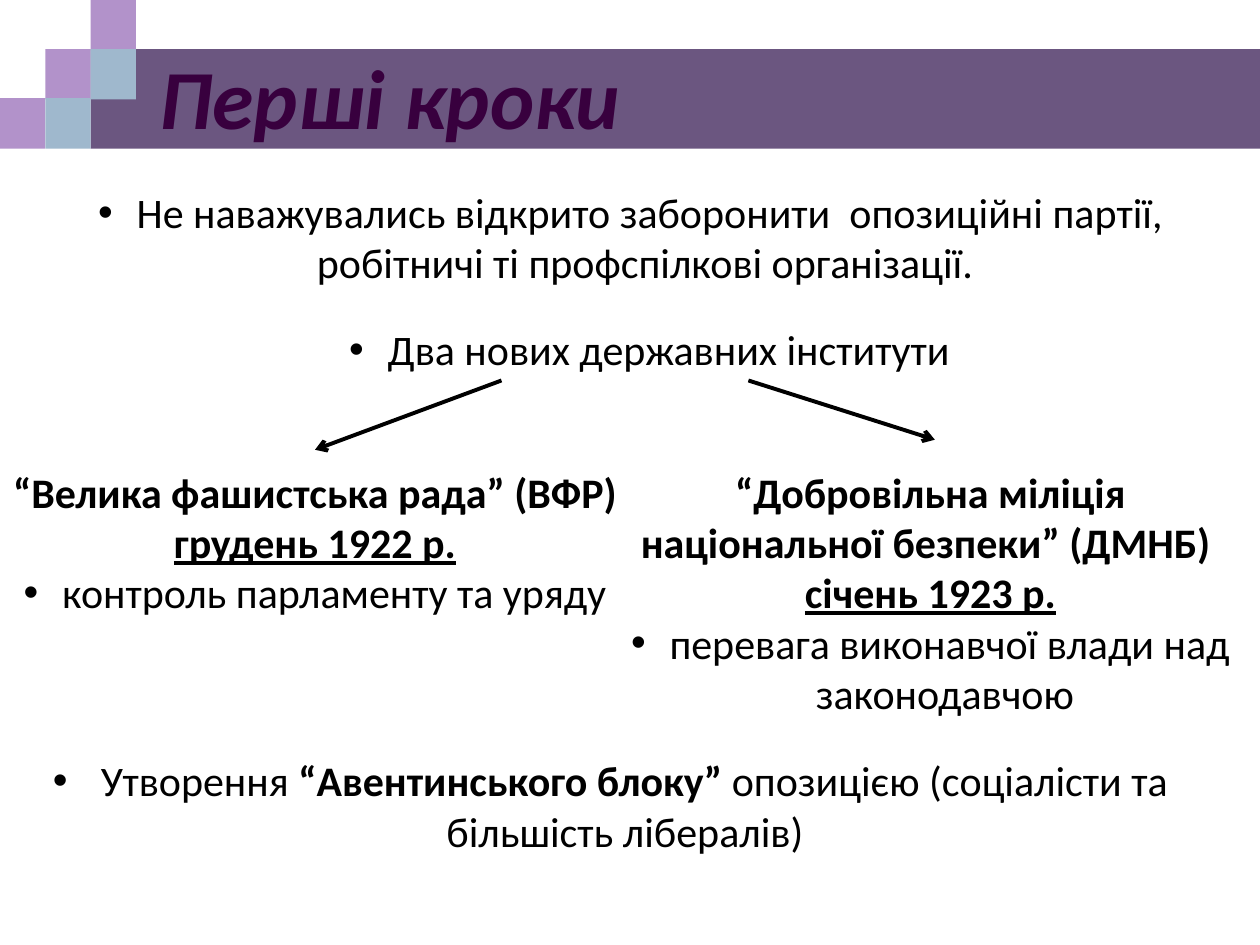
from lxml import etree
from pptx import Presentation
from pptx.dml.color import RGBColor
from pptx.enum.shapes import MSO_CONNECTOR, MSO_SHAPE
from pptx.enum.text import PP_ALIGN
from pptx.oxml.ns import qn
from pptx.util import Inches, Pt

RECT = MSO_SHAPE.RECTANGLE
LINE = MSO_CONNECTOR.STRAIGHT
CENTER = PP_ALIGN.CENTER
FONT = "Calibri"
HANG = Inches(0.23)
COLORS = {
    "band": "6B5680",
    "lilac": "B292CA",
    "blue": "9FB8CD",
    "title": "38003E",
    "edge": "FCFCFD",
    "ink": "000000",
}


def rgb(name):
    return RGBColor.from_string(COLORS[name])


def add_rect(slide, left, top, width, height, color):
    rect = slide.shapes.add_shape(
        RECT, Inches(left), Inches(top), Inches(width), Inches(height))
    rect.shadow.inherit = False
    rect.fill.solid()
    rect.fill.fore_color.rgb = rgb(color)
    rect.line.fill.background()


def add_box(slide, left, top, width, height):
    box = slide.shapes.add_textbox(
        Inches(left), Inches(top), Inches(width), Inches(height))
    box.text_frame.word_wrap = True
    return box.text_frame


def add_run(para, text, size=24, color="ink", bold=False, italic=False, under=False):
    run = para.add_run()
    run.text = text
    font = run.font
    font.name, font.size = FONT, Pt(size)
    font.bold, font.italic, font.underline = bold, italic, under
    font.color.rgb = rgb(color)
    return run


def add_bullet(para):
    props = para._p.get_or_add_pPr()
    props.set("marL", str(HANG))
    props.set("indent", str(-HANG))
    etree.SubElement(props, qn("a:buFont"), typeface="Arial")
    etree.SubElement(props, qn("a:buChar"), char="•")


def add_text(slide, place, paras):
    """Fill a centred box; each paragraph is (bulleted, [(text, style), ...])."""
    frame = add_box(slide, *place)
    for i, (bullet, runs) in enumerate(paras):
        para = frame.add_paragraph() if i else frame.paragraphs[0]
        para.alignment = CENTER
        if bullet:
            add_bullet(para)
        for text, style in runs:
            add_run(para, text, **style)


def add_arrow(slide, x1, y1, x2, y2):
    arrow = slide.shapes.add_connector(
        LINE, Inches(x1), Inches(y1), Inches(x2), Inches(y2))
    arrow.line.color.rgb = rgb("ink")
    arrow.line.width = Pt(2.25)
    etree.SubElement(arrow.line._get_or_add_ln(), qn("a:tailEnd"), type="arrow")
    etree.SubElement(arrow._element.spPr, qn("a:effectLst"))


def add_title(slide, text):
    para = add_box(slide, 1.17, 0.31, 8.83, 0.91).paragraphs[0]
    run = add_run(para, text, 48, "title", bold=True, italic=True)
    edge = etree.Element(qn("a:ln"), w=str(Pt(1.4)))
    fill = etree.SubElement(edge, qn("a:solidFill"))
    etree.SubElement(fill, qn("a:srgbClr"), val=COLORS["edge"])
    run.font._element.insert(0, edge)


def add_header(slide):
    """Draw the band and the stair of squares at its left end."""
    wide, high = 0.36, 0.4
    add_rect(slide, 2 * wide, 0.39, 9.28, 0.79, "band")
    for col, row, color in [(0, 2, "lilac"), (1, 1, "lilac"), (2, 0, "lilac"),
                            (2, 1, "blue"), (1, 2, "blue")]:
        add_rect(slide, col * wide, row * 0.39, wide, high, color)


def add_branch(slide, place, name, date, role):
    add_text(slide, place, [
        (False, [(name, {"bold": True})]),
        (False, [(date, {"bold": True, "under": True})]),
        (True, [(role, {})]),
    ])


def main():
    deck = Presentation()
    deck.slide_width, deck.slide_height = Inches(10), Inches(7.5)
    slide = deck.slides.add_slide(deck.slide_layouts[6])

    add_header(slide)
    add_title(slide, "Перші кроки")
    add_text(slide, (0.16, 1.43, 9.69, 0.91), [(True, [
        (" Не наважувались відкрито заборонити  опозиційні партії, "
         "робітничі ті профспілкові організації.", {})])])
    add_text(slide, (0.31, 2.52, 9.69, 0.5), [(True, [
        (" Два нових державних інститути", {})])])
    add_arrow(slide, 3.98, 3.02, 2.5, 3.57)
    add_arrow(slide, 5.94, 3.02, 7.42, 3.49)
    add_branch(slide, (0, 3.65, 5, 2.12), "“Велика фашистська рада” (ВФР) ",
               "грудень 1922 р.", " контроль парламенту та уряду")
    add_branch(slide, (4.77, 3.65, 5.23, 2.52),
               "“Добровільна міліція національної безпеки” (ДМНБ) ",
               "січень 1923 р.", " перевага виконавчої влади над законодавчою")
    add_text(slide, (0, 5.94, 9.69, 0.91), [(True, [
        ("  Утворення ", {}),
        ("“Авентинського блоку” ", {"bold": True}),
        ("опозицією (соціалісти та більшість лібералів)", {})])])

    deck.save("out.pptx")


if __name__ == "__main__":
    main()
